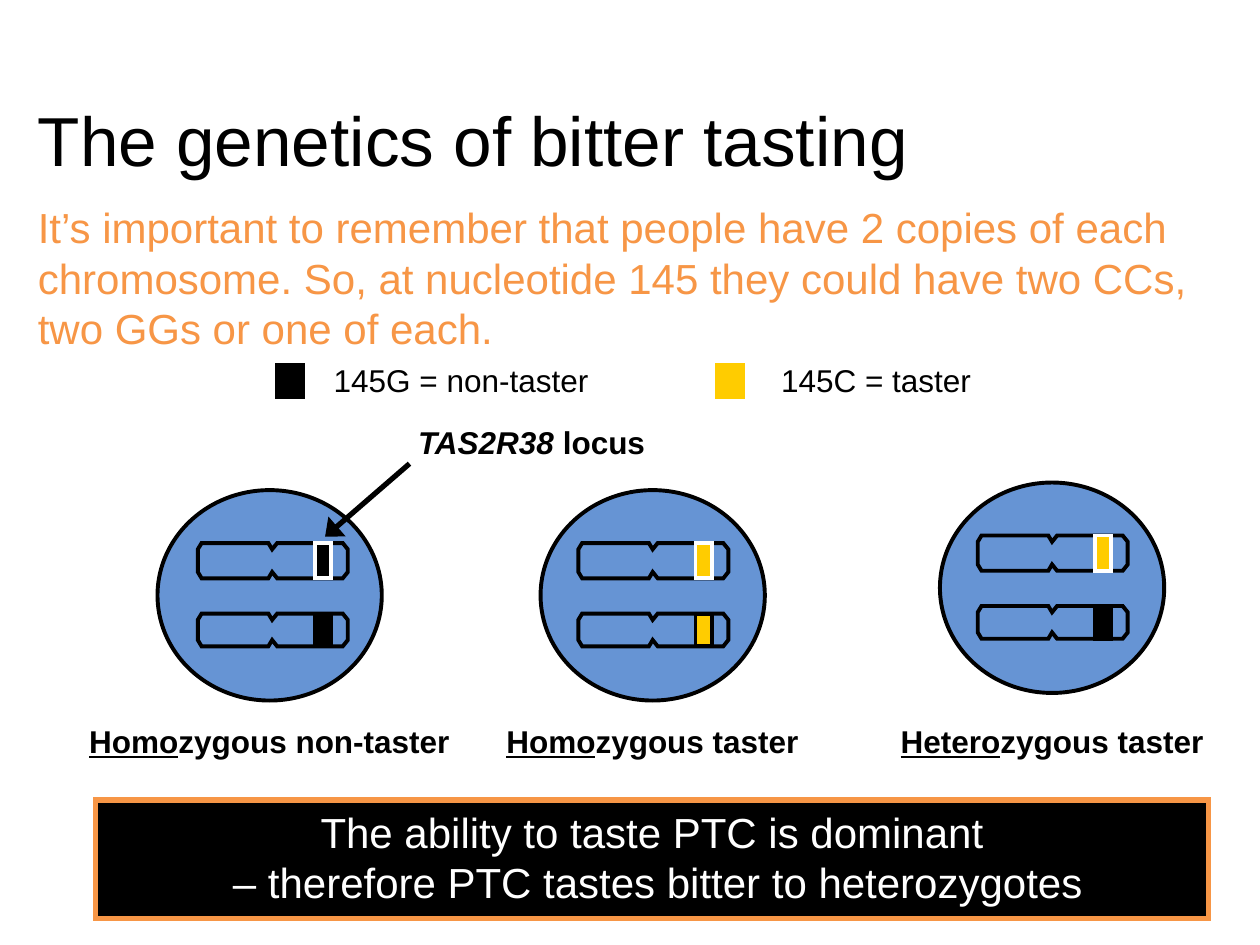
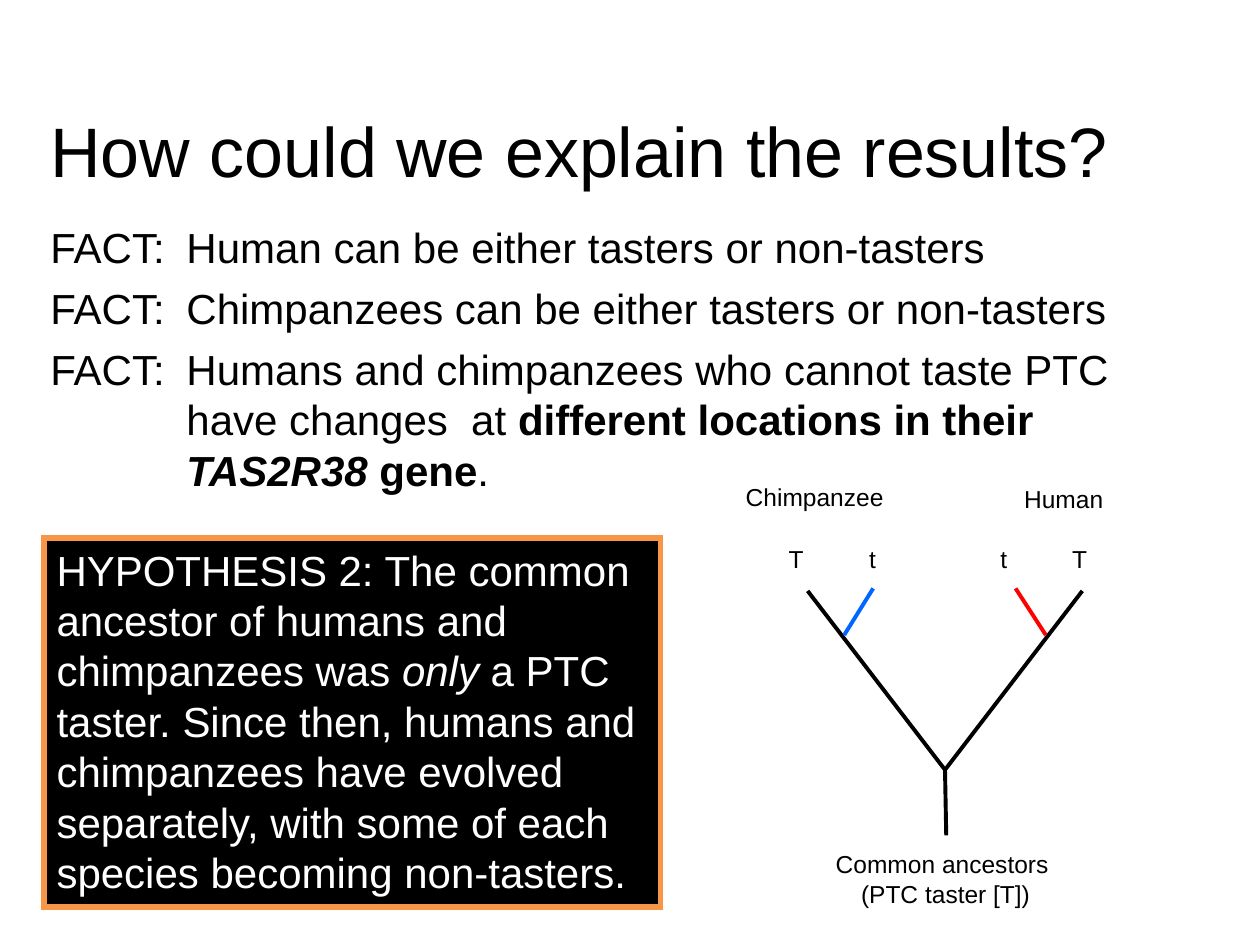
from lxml.etree import SubElement
from pptx import Presentation
from pptx.dml.color import RGBColor
from pptx.enum.shapes import MSO_CONNECTOR, MSO_SHAPE
from pptx.enum.text import MSO_ANCHOR, MSO_AUTO_SIZE, PP_ALIGN
from pptx.oxml.ns import qn
from pptx.util import Inches, Pt

BLACK = RGBColor(0x00, 0x00, 0x00)
WHITE = RGBColor(0xFF, 0xFF, 0xFF)
ORANGE = RGBColor(0xF7, 0x96, 0x46)
YELLOW = RGBColor(0xFF, 0xCC, 0x00)
CELL_BLUE = RGBColor(0x66, 0x94, 0xD4)
BRANCH_BLUE = RGBColor(0x00, 0x66, 0xFF)
BRANCH_RED = RGBColor(0xFF, 0x00, 0x00)


def write(box, paragraphs, size, color=BLACK, align=PP_ALIGN.LEFT, hanging=0, wrap=True):
    frame = box.text_frame
    frame.word_wrap = wrap
    frame.auto_size = MSO_AUTO_SIZE.NONE
    frame.vertical_anchor = MSO_ANCHOR.TOP
    for index, runs in enumerate(paragraphs):
        paragraph = frame.paragraphs[0] if index == 0 else frame.add_paragraph()
        paragraph.alignment = align
        paragraph.line_spacing = 1.0
        paragraph.space_before = Pt(6 if hanging and index else 0)
        properties = paragraph._p.get_or_add_pPr()
        properties.set("marL", str(Inches(hanging)))
        properties.set("indent", str(-Inches(hanging)))
        SubElement(properties, qn("a:buNone"))
        paragraph.font.name = "Arial"
        paragraph.font.size = Pt(size)
        paragraph.font.color.rgb = color
        written = []
        for text, styles in runs:
            run = paragraph.add_run()
            run.text = text
            written.append((run, styles))
        for style in ("bold", "italic", "underline"):
            styled = [run for run, styles in written if style in styles]
            targets = [paragraph] if len(styled) == len(written) else styled
            for target in targets:
                setattr(target.font, style, True)


def paint(shape, fill, line, width):
    shape.shadow.inherit = False
    if fill is None:
        shape.fill.background()
    else:
        shape.fill.solid()
        shape.fill.fore_color.rgb = fill
    shape.line.color.rgb = line
    shape.line.width = Pt(width)
    SubElement(shape.line._get_or_add_ln(), qn("a:miter"), lim="800000")


prs = Presentation()
prs.slide_width = Inches(10)
prs.slide_height = Inches(7.5)
genetics = prs.slides.add_slide(prs.slide_layouts[1])
results = prs.slides.add_slide(prs.slide_layouts[1])

headings = [
    (genetics, "The genetics of bitter tasting", 39.6, (0.2, 0.72, 7.49, 1.25)),
    (results, "How could we explain the results?", 40, (0.3, 0.8, 9.34, 1.43)),
]
for slide, heading, size, place in headings:
    title = slide.shapes.title
    title.left, title.top, title.width, title.height = map(Inches, place)
    write(title, [[(heading, "")]], size)

intro = [[(
    "It’s important to remember that people have 2 copies of each chromosome. "
    "So, at nucleotide 145 they could have two CCs, two GGs or one of each.", "")]]
facts = [
    [("FACT:\tHuman can be either tasters or non-tasters", "")],
    [("FACT:\tChimpanzees can be either tasters or non-tasters", "")],
    [("FACT:\tHumans and chimpanzees who cannot taste PTC have changes  at ", ""),
     ("different locations in their ", "bold"), ("TAS2R38", "bold italic"),
     (" gene", "bold"), (".", "")],
]
bodies = [
    (genetics, intro, ORANGE, 0, (0.2, 1.55, 9.59, 1.72)),
    (results, facts, BLACK, 1.08, (0.3, 1.71, 8.75, 2.28)),
]
for slide, paragraphs, color, hanging, place in bodies:
    body = slide.placeholders[1]
    body.left, body.top, body.width, body.height = map(Inches, place)
    write(body, paragraphs, 24, color, hanging=hanging)

CHROMOSOME_X = (1.15, 1.19, 1.19, 1.15, 0.63, 0.59, 0.56,
                0.03, 0, 0, 0.03, 0.56, 0.59, 0.63)
cells = [
    (1.25, 3.89, 1.57, BLACK, BLACK),
    (4.29, 3.89, 4.59, YELLOW, YELLOW),
    (7.46, 3.83, 7.76, YELLOW, BLACK),
]
for left, top, chromosome_left, upper_allele, lower_allele in cells:
    cell = genetics.shapes.add_shape(
        MSO_SHAPE.OVAL, Inches(left), Inches(top), Inches(1.78), Inches(1.67))
    paint(cell, CELL_BLUE, BLACK, 2.25)
    copies = [(0.98, 0.26, lower_allele, BLACK), (0.42, 0.28, upper_allele, WHITE)]
    for drop, height, allele, border in copies:
        notch = height - 0.05
        outline_y = (0, 0.05, notch, height, height, notch, height,
                     height, notch, 0.05, 0, 0, 0.05, 0)
        outline = [(Inches(chromosome_left + x), Inches(top + drop + y))
                   for x, y in zip(CHROMOSOME_X, outline_y)]
        builder = genetics.shapes.build_freeform(*outline[0])
        builder.add_line_segments(outline[1:], close=True)
        paint(builder.convert_to_shape(), None, BLACK, 2.25)
        locus = genetics.shapes.add_shape(
            MSO_SHAPE.RECTANGLE, Inches(chromosome_left + 0.93), Inches(top + drop),
            Inches(0.13), Inches(height))
        paint(locus, allele, border, 2.25)

for left, color in [(2.19, BLACK), (5.68, YELLOW)]:
    key = genetics.shapes.add_shape(
        MSO_SHAPE.RECTANGLE, Inches(left), Inches(2.89), Inches(0.23), Inches(0.27))
    paint(key, color, color, 0.75)

captions = [
    (2.55, 2.82, 2.22, [("145G = non-taster", "")]),
    (6.1, 2.82, 1.71, [("145C = taster", "")]),
    (3.22, 3.31, 2.02, [("TAS2R38", "bold italic"), (" locus", "bold")]),
    (0.61, 5.68, 3.06, [("Homo", "bold underline"), ("zygous non-taster", "bold")]),
    (3.92, 5.68, 2.52, [("Homo", "bold underline"), ("zygous taster", "bold")]),
    (7.05, 5.68, 2.6, [("Hetero", "bold underline"), ("zygous taster", "bold")]),
]
for left, top, width, runs in captions:
    caption = genetics.shapes.add_textbox(
        Inches(left), Inches(top), Inches(width), Inches(0.4))
    write(caption, [runs], 18, wrap=False)

conclusion = [
    [("The ability to taste PTC is dominant", "")],
    [(" – therefore PTC tastes bitter to heterozygotes", "")],
]
hypothesis = [[
    ("HYPOTHESIS 2: The common ancestor of humans and chimpanzees was ", ""),
    ("only", "italic"),
    (" a PTC taster. Since then, humans and chimpanzees have evolved separately, "
     "with some of each species becoming non-tasters.", ""),
]]
banners = [
    (genetics, conclusion, PP_ALIGN.CENTER, (0.76, 6.35, 8.83, 0.94)),
    (results, hypothesis, PP_ALIGN.LEFT, (0.35, 4.27, 4.89, 2.93)),
]
for slide, paragraphs, align, place in banners:
    banner = slide.shapes.add_shape(MSO_SHAPE.RECTANGLE, *map(Inches, place))
    paint(banner, BLACK, ORANGE, 3)
    write(banner, paragraphs, 24, WHITE, align)

lines = [
    (genetics, (2.58, 4.26), (3.25, 3.68), BLACK, 3, True),
    (results, (6.41, 4.69), (7.5, 6.11), BLACK, 2.25, False),
    (results, (8.59, 4.69), (7.5, 6.11), BLACK, 2.25, False),
    (results, (7.5, 6.11), (7.51, 6.63), BLACK, 2.25, False),
    (results, (6.7, 5.04), (6.93, 4.67), BRANCH_BLUE, 2.25, False),
    (results, (8.3, 5.04), (8.06, 4.67), BRANCH_RED, 2.25, False),
]
for slide, start, end, color, width, pointed in lines:
    line = slide.shapes.add_connector(
        MSO_CONNECTOR.STRAIGHT, *map(Inches, start + end))
    line.line.color.rgb = color
    line.line.width = Pt(width)
    if pointed:
        SubElement(line.line._get_or_add_ln(), qn("a:headEnd"),
                   type="triangle", w="lg", len="med")
    SubElement(line._element.spPr, qn("a:effectLst"))

tree_labels = [
    (5.82, 3.78, 1.69, "Chimpanzee"),
    (8.03, 3.79, 1.37, "Human"),
    (6.16, 4.27, 0.45, "T"),
    (6.8, 4.27, 0.38, "t"),
    (7.84, 4.27, 0.39, "t"),
    (8.41, 4.27, 0.45, "T"),
]
for left, top, width, text in tree_labels:
    label = results.shapes.add_textbox(
        Inches(left), Inches(top), Inches(width), Inches(0.42))
    write(label, [[(text, "")]], 14)

ancestors = results.shapes.add_textbox(
    Inches(6.53), Inches(6.69), Inches(1.95), Inches(0.57))
write(ancestors, [[("Common ancestors ", "")], [("(PTC taster [T])", "")]],
      14, align=PP_ALIGN.CENTER)

prs.save("out.pptx")
